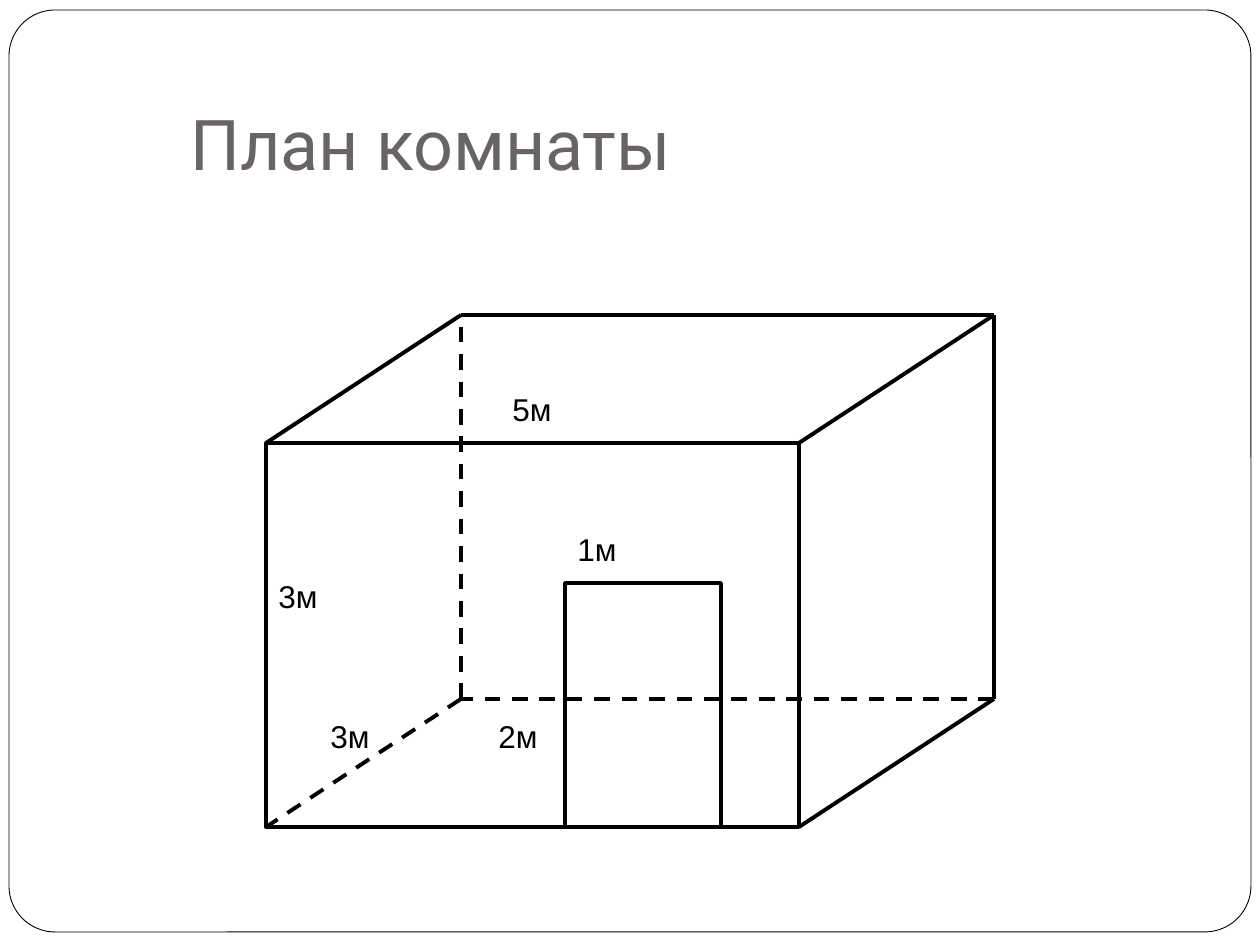
from pptx import Presentation
from pptx.dml.color import RGBColor
from pptx.enum.dml import MSO_LINE
from pptx.enum.shapes import MSO_CONNECTOR, MSO_SHAPE
from pptx.enum.text import MSO_ANCHOR
from pptx.oxml.ns import qn
from pptx.util import Emu, Pt
from lxml.etree import SubElement

BLACK = RGBColor(0x00, 0x00, 0x00)
WHITE = RGBColor(0xFF, 0xFF, 0xFF)
GRAY = RGBColor(0x69, 0x64, 0x64)


def px(length):
    return Emu(round(length * 914400 / 126))


class RoomSlide:
    stroke = 2.25

    def __init__(self, presentation):
        self.slide = presentation.slides.add_slide(presentation.slide_layouts[6])

    def box(self, left, top, width, height, kind=MSO_SHAPE.RECTANGLE,
            fill=None, stroke=stroke):
        shape = self.slide.shapes.add_shape(
            kind, px(left), px(top), px(width), px(height))
        shape.shadow.inherit = False
        if fill is None:
            shape.fill.background()
        else:
            shape.fill.solid()
            shape.fill.fore_color.rgb = fill
        shape.line.color.rgb = BLACK
        shape.line.width = Pt(stroke)
        return shape

    def edge(self, start, end, hidden=False):
        connector = self.slide.shapes.add_connector(
            MSO_CONNECTOR.STRAIGHT, *map(px, start + end))
        connector.line.color.rgb = BLACK
        connector.line.width = Pt(self.stroke)
        if hidden:
            connector.line.dash_style = MSO_LINE.DASH
        SubElement(connector.element.spPr, qn("a:effectLst"))

    def text(self, wording, left, top, width=169, height=60,
             font="Arial", size=18, color=BLACK):
        frame = self.slide.shapes.add_textbox(
            px(left), px(top), px(width), px(height)).text_frame
        frame.word_wrap = True
        paragraph = frame.paragraphs[0]
        paragraph.text = wording
        paragraph.font.name = font
        paragraph.font.size = Pt(size)
        paragraph.font.color.rgb = color
        return frame


def main():
    presentation = Presentation()
    presentation.slide_width, presentation.slide_height = px(1260), px(945)
    room = RoomSlide(presentation)

    # Slide frame and title
    frame = room.box(9, 10, 1242, 922, MSO_SHAPE.ROUNDED_RECTANGLE, WHITE, 0.5)
    frame.adjustments[0] = 0.05
    title = room.text("План комнаты", 178, 39, 1016, 158, "Roboto", 40, GRAY)
    title.vertical_anchor = MSO_ANCHOR.BOTTOM
    title.margin_bottom = title.margin_left

    # Front wall with the door
    left, top, width, height = 266, 443, 533, 384
    right, bottom = left + width, top + height
    room.box(left, top, width, height)
    room.box(565, 583, 156, bottom - 583)

    # Back wall, shifted by the depth of the room
    depth_x, depth_y = 195, -128
    front = [(left, top), (right, top), (right, bottom), (left, bottom)]
    back = [(x + depth_x, y + depth_y) for x, y in front]
    hidden_corner = back[3]
    for index, corner in enumerate(back):
        following = back[(index + 1) % 4]
        room.edge(corner, front[index], corner == hidden_corner)
        room.edge(corner, following, hidden_corner in (corner, following))

    # Dimensions
    for wording, x, y in [("3м", 266, 571), ("5м", 500, 384), ("3м", 318, 711),
                          ("1м", 565, 524), ("2м", 486, 711)]:
        room.text(wording, x, y)

    presentation.save("out.pptx")


if __name__ == "__main__":
    main()
